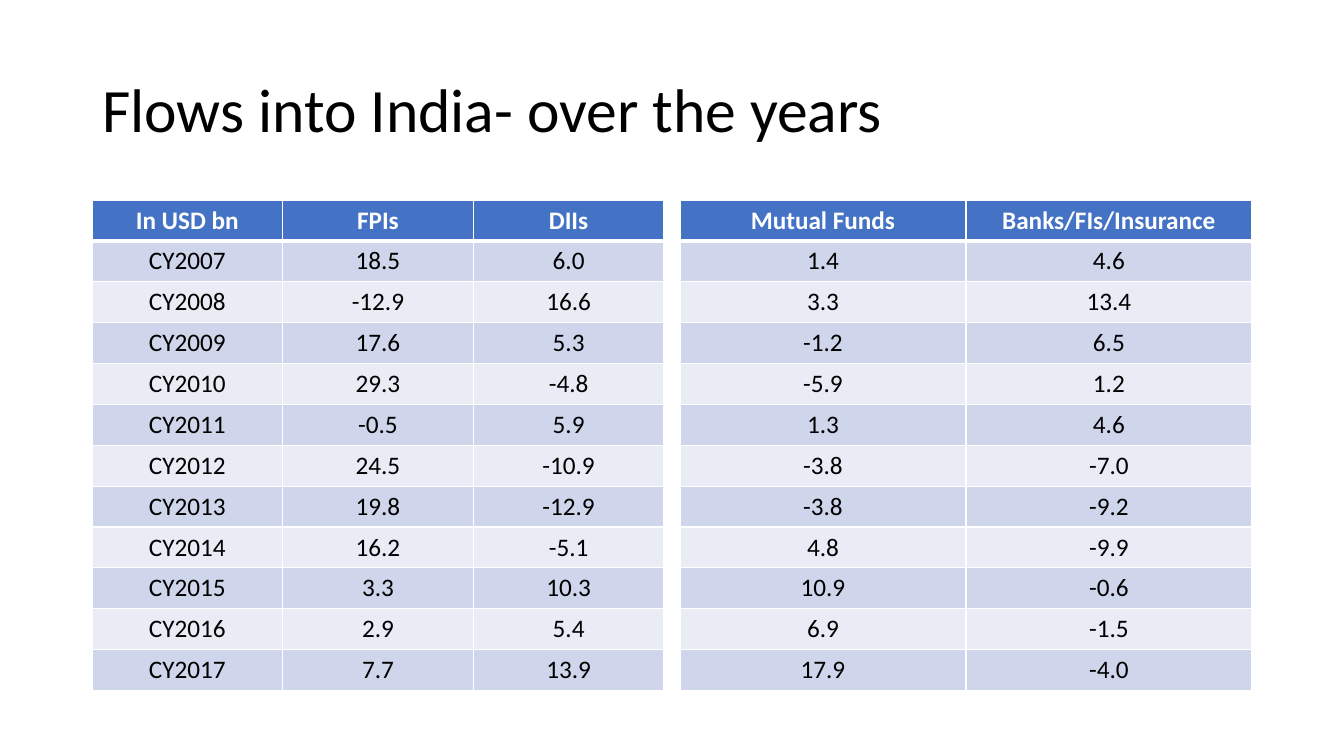
from lxml.etree import SubElement
from pptx import Presentation
from pptx.dml.color import RGBColor
from pptx.enum.text import MSO_ANCHOR, PP_ALIGN
from pptx.oxml.ns import qn
from pptx.util import Emu, Pt

TITLE = "Flows into India- over the years"
TITLE_BOX = (92, 40, 1159, 146)
MUTUAL_AND_BANKS = [
    ("Mutual Funds", "Banks/FIs/Insurance"),
    ("1.4", "4.6"),
    ("3.3", "13.4"),
    ("-1.2", "6.5"),
    ("-5.9", "1.2"),
    ("1.3", "4.6"),
    ("-3.8", "-7.0"),
    ("-3.8", "-9.2"),
    ("4.8", "-9.9"),
    ("10.9", "-0.6"),
    ("6.9", "-1.5"),
    ("17.9", "-4.0"),
]
FPIS_AND_DIIS = [
    ("In USD bn", "FPIs", "DIIs"),
    ("CY2007", "18.5", "6.0"),
    ("CY2008", "-12.9", "16.6"),
    ("CY2009", "17.6", "5.3"),
    ("CY2010", "29.3", "-4.8"),
    ("CY2011", "-0.5", "5.9"),
    ("CY2012", "24.5", "-10.9"),
    ("CY2013", "19.8", "-12.9"),
    ("CY2014", "16.2", "-5.1"),
    ("CY2015", "3.3", "10.3"),
    ("CY2016", "2.9", "5.4"),
    ("CY2017", "7.7", "13.9"),
]
TABLES = [(680, MUTUAL_AND_BANKS), (92, FPIS_AND_DIIS)]
TABLE_TOP, TABLE_WIDTH, ROW_HEIGHT = 200, 572, 40
HEADER_FILL, BAND_FILLS = "4472C4", ("E9EBF5", "CFD5EA")
WHITE, BLACK = "FFFFFF", "000000"
TITLE_FONT = {"name": "Calibri", "size": Pt(44), "bold": False}
CELL_FONT = {"name": "Calibri", "size": Pt(18)}


def px(n):
    """Turn pixels into EMU."""
    return Emu(round(n * 914400 / 100.8))


def rgb(value):
    """Turn a hex string into a colour."""
    return RGBColor.from_string(value)


def write(p, text, font, color):
    """Add one formatted run to a paragraph."""
    r = p.add_run()
    r.text = text
    for name, value in font.items():
        setattr(r.font, name, value)
    r.font.color.rgb = rgb(color)


def add_borders(cell, widths):
    """Draw white borders of the given point widths on a cell."""
    tcPr = cell._tc.get_or_add_tcPr()
    for side, width in widths.items():
        ln = SubElement(tcPr, qn(f"a:ln{side}"), w=str(Pt(width)))
        fill = SubElement(ln, qn("a:solidFill"))
        SubElement(fill, qn("a:srgbClr"), val=WHITE)


def add_flow_table(s, left, rows):
    """Add a banded table with a header row and equal columns."""
    n_cols = len(rows[0])
    height = ROW_HEIGHT * len(rows)
    table = s.shapes.add_table(len(rows), n_cols, px(left), px(TABLE_TOP),
                               px(TABLE_WIDTH), px(height)).table
    for col in table.columns:
        col.width = px(TABLE_WIDTH / n_cols)
    for i, row in enumerate(rows):
        header = i == 0
        for j, text in enumerate(row):
            cell = table.cell(i, j)
            add_borders(cell, {"L": 1, "R": 1, "T": 3 if i == 1 else 1,
                               "B": 3 if header else 1})
            cell.fill.solid()
            cell.fill.fore_color.rgb = rgb(HEADER_FILL if header else BAND_FILLS[i % 2])
            p = cell.text_frame.paragraphs[0]
            p.alignment = PP_ALIGN.CENTER
            write(p, text, {**CELL_FONT, "bold": header}, WHITE if header else BLACK)


def main():
    """Build the slide and save it."""
    prs = Presentation()
    prs.slide_width, prs.slide_height = px(1344), px(756)
    s = prs.slides.add_slide(prs.slide_layouts[5])
    title = s.shapes.title
    title.left, title.top, title.width, title.height = map(px, TITLE_BOX)
    tf = title.text_frame
    tf.vertical_anchor = MSO_ANCHOR.MIDDLE
    p = tf.paragraphs[0]
    p.alignment, p.line_spacing = PP_ALIGN.LEFT, 0.9
    write(p, TITLE, TITLE_FONT, BLACK)
    for left, rows in TABLES:
        add_flow_table(s, left, rows)
    prs.save("out.pptx")


if __name__ == "__main__":
    main()
